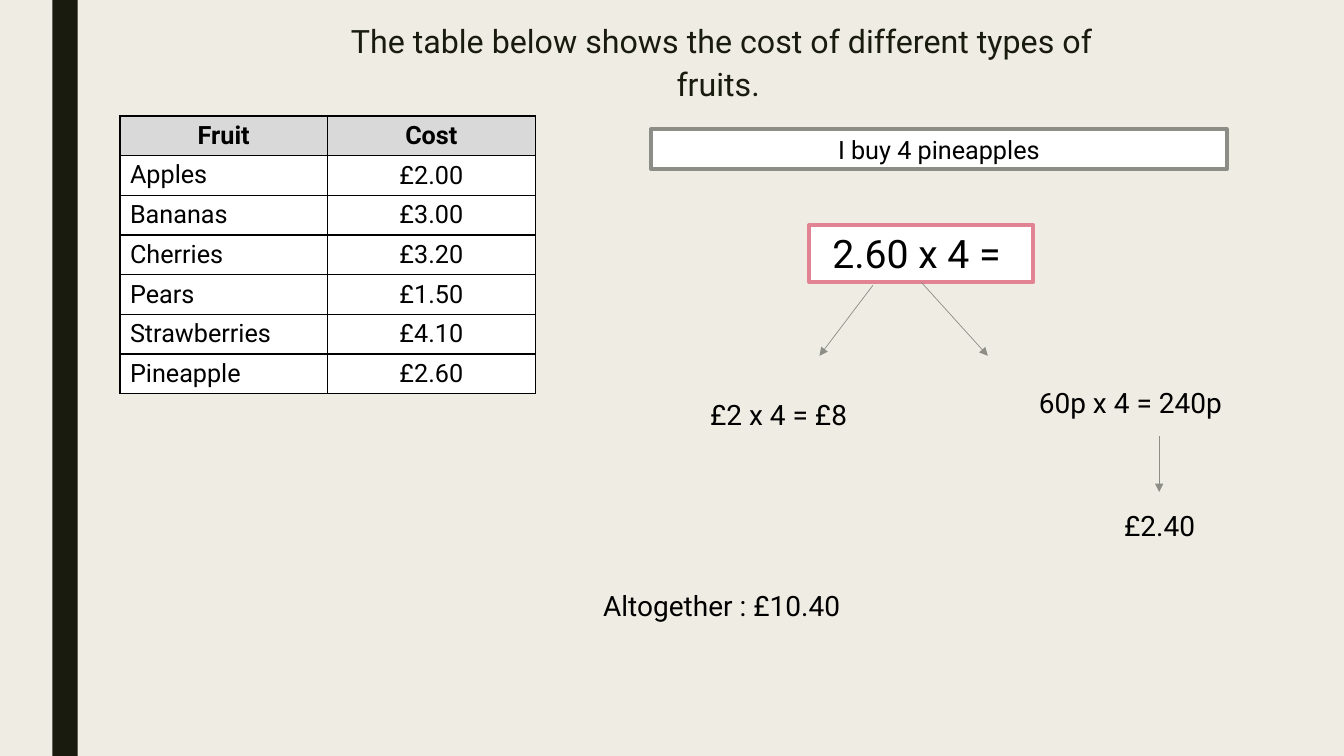
from lxml import etree
from pptx import Presentation
from pptx.dml.color import RGBColor
from pptx.enum.shapes import MSO_CONNECTOR, MSO_SHAPE
from pptx.enum.text import MSO_ANCHOR, MSO_AUTO_SIZE, PP_ALIGN
from pptx.oxml.ns import qn
from pptx.util import Pt

RECT = MSO_SHAPE.RECTANGLE
STRAIGHT = MSO_CONNECTOR.STRAIGHT
LEFT, CENTER = PP_ALIGN.LEFT, PP_ALIGN.CENTER
TOP, MIDDLE = MSO_ANCHOR.TOP, MSO_ANCHOR.MIDDLE
GROW, FIXED = MSO_AUTO_SIZE.SHAPE_TO_FIT_TEXT, MSO_AUTO_SIZE.NONE

BACKGROUND = RGBColor(0xEF, 0xED, 0xE3)
DARK = RGBColor(0x19, 0x1B, 0x0E)
GREY = RGBColor(0x8C, 0x8D, 0x86)
PINK = RGBColor(0xE2, 0x83, 0x94)
HEADER = RGBColor(0xD9, 0xD9, 0xD9)
WHITE = RGBColor(0xFF, 0xFF, 0xFF)
BLACK = RGBColor(0, 0, 0)

FONT = "Roboto"
ROW_HEIGHT = 28.3
COLUMN_WIDTH = 148.3
BOTTOM = 2

FRUITS = [
    ("Fruit", "Cost"),
    ("Apples", "£2.00"),
    ("Bananas", "£3.00"),
    ("Cherries", "£3.20"),
    ("Pears", "£1.50"),
    ("Strawberries", "£4.10"),
    ("Pineapple", "£2.60"),
]
WORKINGS = [
    ("60p x 4 = 240p", 705.6, 272.16, 203.76),
    ("£2 x 4 = £8", 454.32, 280.08, 203.76),
    ("Altogether : £10.40", 165.6, 416.88, 699.84),
    ("£2.40", 726.48, 360, 203.76),
]


def write(tf, text, size, color=BLACK, bold=False, align=CENTER):
    p = tf.paragraphs[0]
    p.alignment = align
    r = p.add_run()
    r.text = text
    r.font.color.rgb = color
    for name, value in {"name": FONT, "size": Pt(size), "bold": bold}.items():
        setattr(r.font, name, value)
    return p


def set_frame(tf, anchor, auto_size):
    settings = {"word_wrap": True, "vertical_anchor": anchor, "auto_size": auto_size}
    for name, value in settings.items():
        setattr(tf, name, value)


def add_title(s, text, left, top, width, height):
    title = s.shapes.title
    box = {"left": left, "top": top, "width": width, "height": height}
    for name, value in box.items():
        setattr(title, name, Pt(value))
    set_frame(title.text_frame, MIDDLE, FIXED)
    write(title.text_frame, text, 23, DARK).line_spacing = 1.12


def add_rect(s, left, top, width, height, fill, line=None):
    sp = s.shapes.add_shape(RECT, Pt(left), Pt(top), Pt(width), Pt(height))
    sp.shadow.inherit = False
    sp.fill.solid()
    sp.fill.fore_color.rgb = fill
    if line is None:
        sp.line.fill.background()
    else:
        sp.line.color.rgb = line
        sp.line.width = Pt(2.75)
    return sp


def add_label_box(s, text, size, left, top, width, height, line):
    sp = add_rect(s, left, top, width, height, WHITE, line)
    set_frame(sp.text_frame, TOP, GROW)
    write(sp.text_frame, text, size)
    return sp


def add_working(s, text, left, top, width):
    sp = s.shapes.add_textbox(Pt(left), Pt(top), Pt(width), Pt(31.68))
    set_frame(sp.text_frame, TOP, GROW)
    write(sp.text_frame, text, 20)


def add_arrow(s, x1, y1, x2, y2):
    arrow = s.shapes.add_connector(STRAIGHT, Pt(x1), Pt(y1), Pt(x2), Pt(y2))
    arrow.line.color.rgb = GREY
    arrow.line.width = Pt(0.5)
    ln = arrow.line._get_or_add_ln()
    etree.SubElement(ln, qn("a:tailEnd"), type="triangle")
    etree.SubElement(arrow._element.spPr, qn("a:effectLst"))
    return arrow


def add_borders(cell):
    tcPr = cell._tc.get_or_add_tcPr()
    for side in ("lnL", "lnR", "lnT", "lnB"):
        ln = etree.SubElement(tcPr, qn(f"a:{side}"), w=str(Pt(1)))
        fill = etree.SubElement(ln, qn("a:solidFill"))
        etree.SubElement(fill, qn("a:srgbClr"), val=str(BLACK))


def add_price_table(s, left, top):
    rows, cols = len(FRUITS), len(FRUITS[0])
    frame = s.shapes.add_table(rows, cols, Pt(left), Pt(top),
                               Pt(cols * COLUMN_WIDTH), Pt(rows * ROW_HEIGHT))
    table = frame.table
    table.first_row = table.horz_banding = False
    for i, entries in enumerate(FRUITS):
        table.rows[i].height = Pt(ROW_HEIGHT)
        for j, text in enumerate(entries):
            cell = table.cell(i, j)
            is_header = i == 0
            is_name = j == 0 and not is_header
            add_borders(cell)
            cell.fill.solid()
            cell.fill.fore_color.rgb = HEADER if is_header else WHITE
            cell.vertical_anchor = TOP if is_name else MIDDLE
            write(cell.text_frame, text, 18, bold=is_header,
                  align=LEFT if is_name else CENTER)


def main():
    prs = Presentation()
    prs.slide_width, prs.slide_height = Pt(960), Pt(540)
    s = prs.slides.add_slide(prs.slide_layouts[5])
    s.background.fill.solid()
    s.background.fill.fore_color.rgb = BACKGROUND

    add_rect(s, 37.44, 0, 18, 540, DARK)
    add_title(s, "The table below shows the cost of different types of fruits. ",
              215.28, 20.88, 601.2, 43.92)
    add_price_table(s, 85.68, 82.8)
    add_label_box(s, "I buy 4 pineapples", 18, 465.12, 92.16, 411.12, 28.8, GREY)
    calculation = add_label_box(s, "2.60 x 4 = ", 28,
                                578.16, 160.56, 159.84, 41.04, PINK)

    pence_arrow = add_arrow(s, 658.08, 201.6, 705.6, 254.16)
    pence_arrow.begin_connect(calculation, BOTTOM)
    add_arrow(s, 623.52, 203.76, 585.36, 254.16)
    add_arrow(s, 828, 311.76, 828, 351.36)
    for working in WORKINGS:
        add_working(s, *working)

    prs.save("out.pptx")


if __name__ == "__main__":
    main()
